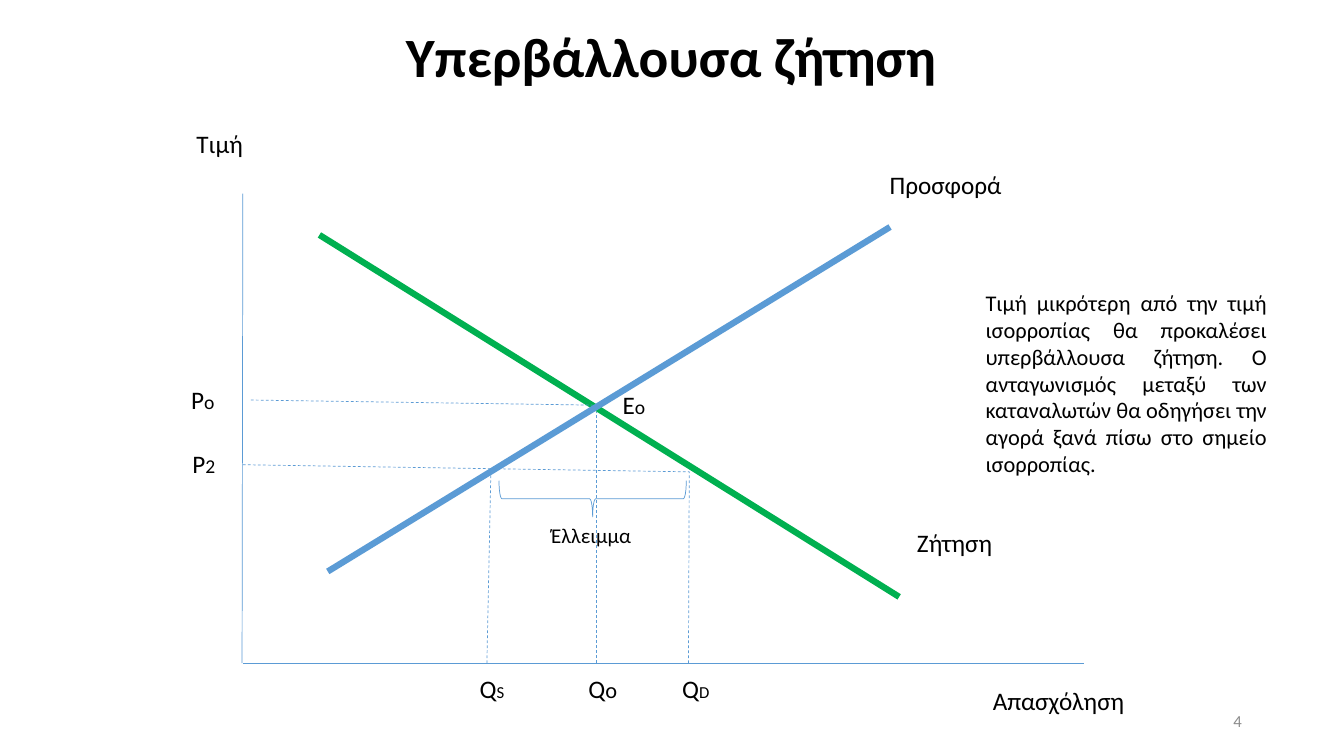
import pptx
import pptx.util
import pptx.dml.color
import pptx.enum.dml
import pptx.enum.shapes
import pptx.enum.text
import lxml.etree

Cm = pptx.util.Cm
Pt = pptx.util.Pt
RGBColor = pptx.dml.color.RGBColor
ALIGN = pptx.enum.text.PP_ALIGN
ANCHOR = pptx.enum.text.MSO_ANCHOR

BLACK = RGBColor(0x00, 0x00, 0x00)
GREY = RGBColor(0x8C, 0x8C, 0x8C)
BLUE = RGBColor(0x5B, 0x9B, 0xD5)
GREEN = RGBColor(0x00, 0xB0, 0x50)
FONT = "Calibri"
THIN, THICK = 0.5, 4.5

ORIGIN_X, BASE_Y = 6.12, 16.71
QUANTITY_Y, QUANTITY_HEIGHT = 16.84, 1.02

title = ("Υπερβάλλουσα ζήτηση", (5.97, 0.64, 21.89, 1.73))
page_number = ("4", (23.93, 17.65, 7.62, 1.02))
explanation = (
    "Τιμή μικρότερη από την τιμή ισορροπίας θα προκαλέσει υπερβάλλουσα ζήτηση. "
    "Ο ανταγωνισμός μεταξύ των καταναλωτών θα οδηγήσει την αγορά ξανά πίσω "
    "στο σημείο ισορροπίας.",
    (24.59, 7.16, 7.59, 5.05),
)
shortage = ("Έλλειμμα", (12.95, 13.03, 3.89, 0.89))
shortage_brace = (14.48, 10.21, 0.91, 4.72)

axes = [
    ((ORIGIN_X, 4.88), (6.10, BASE_Y)),
    ((27.31, BASE_Y), (ORIGIN_X, BASE_Y)),
]
curves = [
    ((8.05, 5.92), (22.66, 15.04), GREEN),
    ((8.26, 14.40), (22.43, 5.72), BLUE),
]
guides = [
    ((6.32, 10.08), (15.04, 10.21)),
    ((ORIGIN_X, 11.71), (17.37, 11.89)),
    ((15.04, BASE_Y), (15.04, 10.39)),
    ((12.27, BASE_Y), (12.37, 11.89)),
    ((17.35, BASE_Y), (17.37, 11.89)),
]
names = [
    ("Τιμή", (4.70, 3.12, 2.84, 1.02)),
    ("Απασχόληση", (24.77, 17.15, 3.96, 1.02)),
    ("Προσφορά", (22.17, 4.14, 4.70, 1.02)),
    ("Ζήτηση", (22.86, 13.16, 4.70, 1.02)),
]
symbols = [
    ("P", "o", 14, (4.57, 9.55, 1.12, 1.02)),
    ("P", "2", 14, (4.60, 11.18, 1.09, 1.02)),
    ("E", "o", 14, (15.44, 9.68, 1.09, 1.02)),
    ("Q", "o", 16, (14.58, QUANTITY_Y, 1.24, QUANTITY_HEIGHT)),
    ("Q", "S", 12, (11.84, QUANTITY_Y, 1.14, QUANTITY_HEIGHT)),
    ("Q", "D", 12, (16.94, QUANTITY_Y, 1.22, QUANTITY_HEIGHT)),
]

deck = pptx.Presentation()
deck.slide_width, deck.slide_height = Cm(33.87), Cm(19.05)
slide = deck.slides.add_slide(deck.slide_layouts[6])


def add_line(start, end, color=BLUE, width=THIN, dashed=False):
    line = slide.shapes.add_connector(
        pptx.enum.shapes.MSO_CONNECTOR.STRAIGHT, *map(Cm, start + end))
    line.line.color.rgb = color
    line.line.width = Pt(width)
    if dashed:
        line.line.dash_style = pptx.enum.dml.MSO_LINE.DASH
    lxml.etree.SubElement(line._element.spPr, pptx.oxml.ns.qn("a:effectLst"))


def add_text(text, box, size=18, color=BLACK, align=ALIGN.LEFT,
             anchor=ANCHOR.TOP, wrap=True):
    frame = slide.shapes.add_textbox(*map(Cm, box)).text_frame
    frame.word_wrap = wrap
    frame.vertical_anchor = anchor
    paragraph = frame.paragraphs[0]
    paragraph.alignment = align
    paragraph.font.name = FONT
    paragraph.font.size = Pt(size)
    paragraph.font.color.rgb = color
    paragraph.add_run().text = text
    return paragraph


def add_symbol(letter, index, index_size, box):
    paragraph = add_text(letter, box, wrap=False)
    suffix = paragraph.add_run()
    suffix.text = index
    for run, size in zip(paragraph.runs, (18, index_size)):
        run.font.size = Pt(size)


heading = add_text(*title, size=39.6, align=ALIGN.CENTER, anchor=ANCHOR.MIDDLE)
heading.font.bold = True
heading.line_spacing = 0.9
add_text(*page_number, size=12, color=GREY, align=ALIGN.RIGHT, anchor=ANCHOR.MIDDLE)

for start, end in axes:
    add_line(start, end)
for start, end, color in curves:
    add_line(start, end, color, THICK)
for start, end in guides:
    add_line(start, end, dashed=True)

for name, box in names:
    add_text(name, box)
for symbol in symbols:
    add_symbol(*symbol)

brace = slide.shapes.add_shape(
    pptx.enum.shapes.MSO_SHAPE.RIGHT_BRACE, *map(Cm, shortage_brace))
brace.rotation = 90
brace.shadow.inherit = False
brace.fill.background()
brace.line.color.rgb = BLUE
brace.line.width = Pt(THIN)

add_text(*shortage, size=15, align=ALIGN.CENTER)
add_text(*explanation, size=16, align=ALIGN.JUSTIFY)

deck.save("out.pptx")
